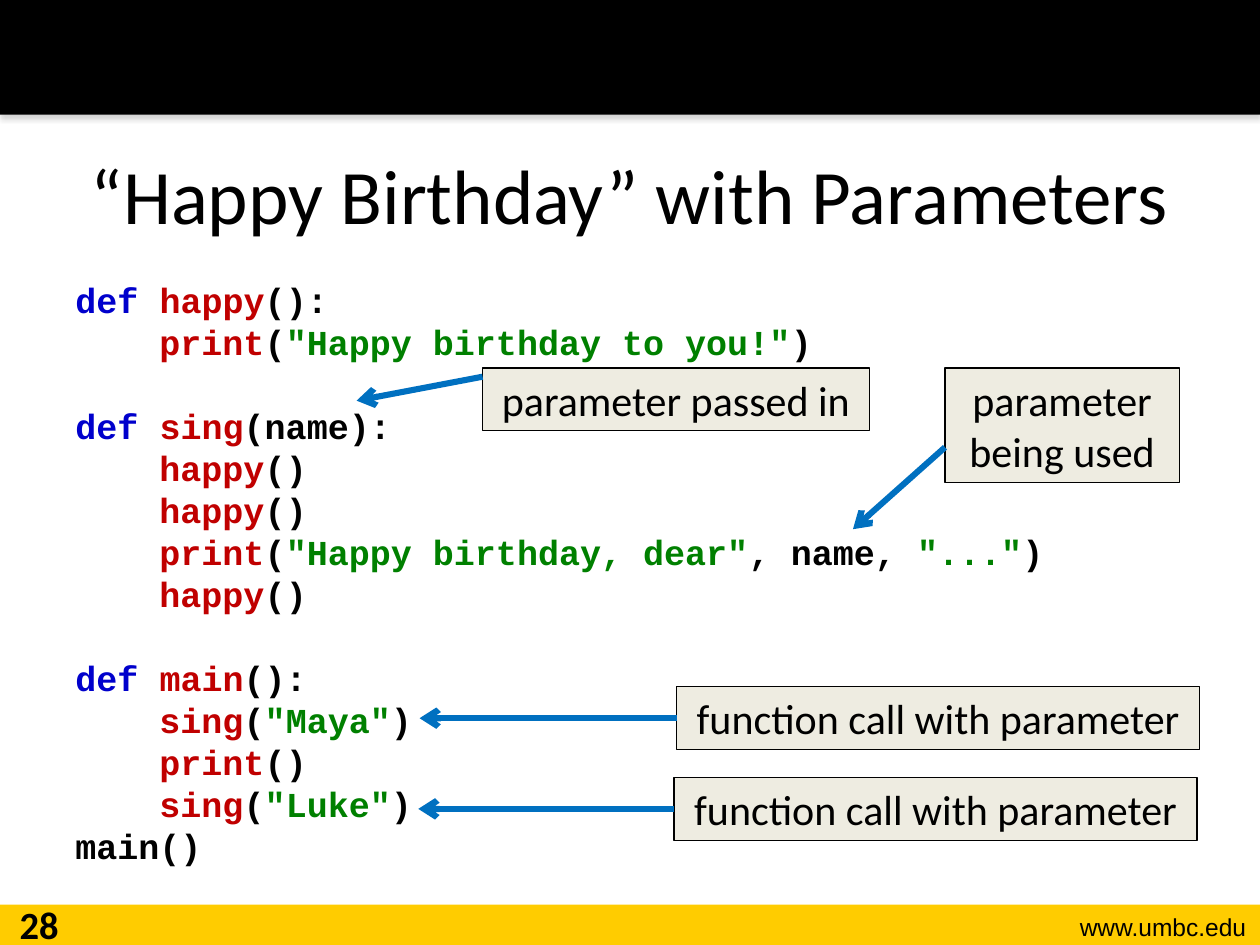
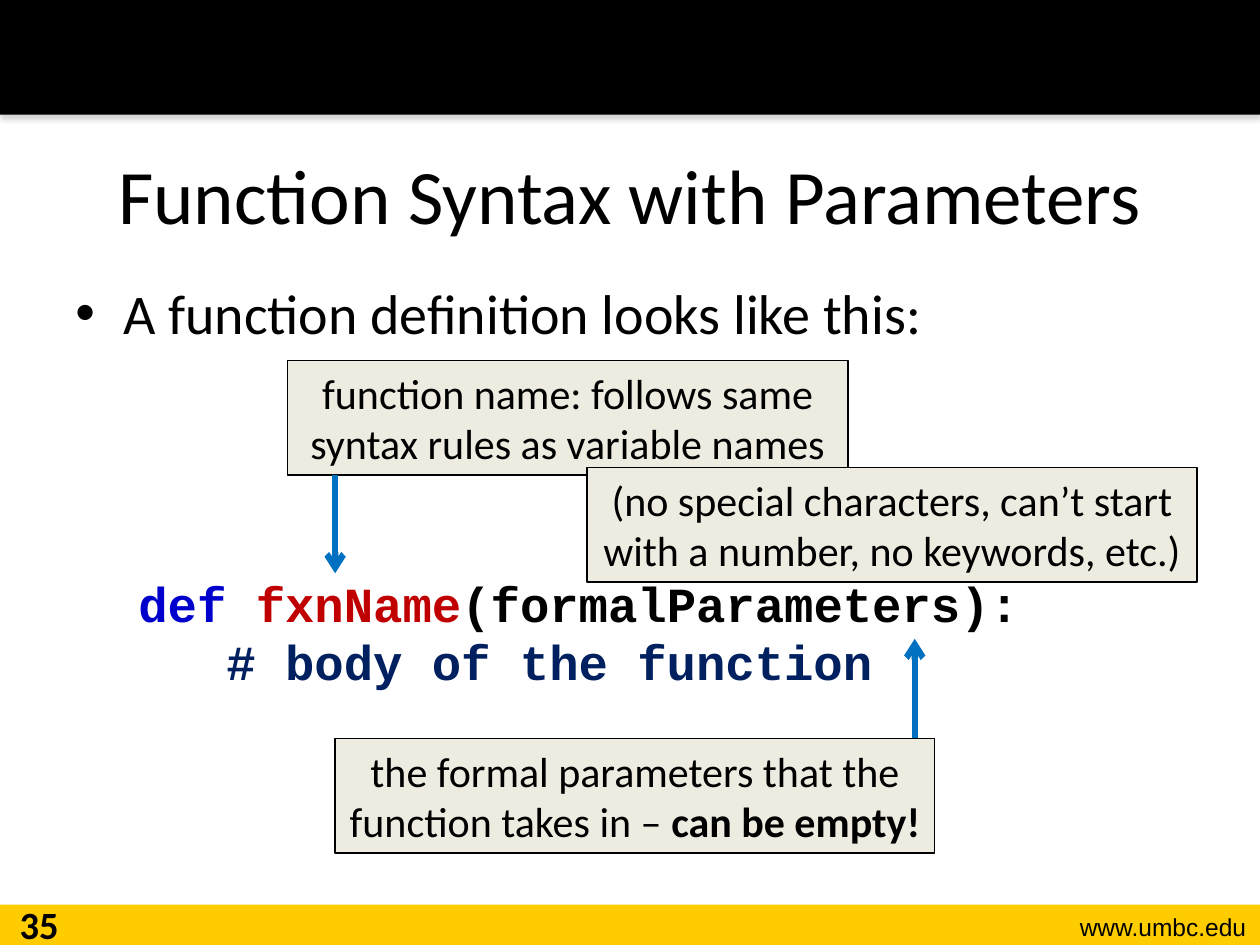
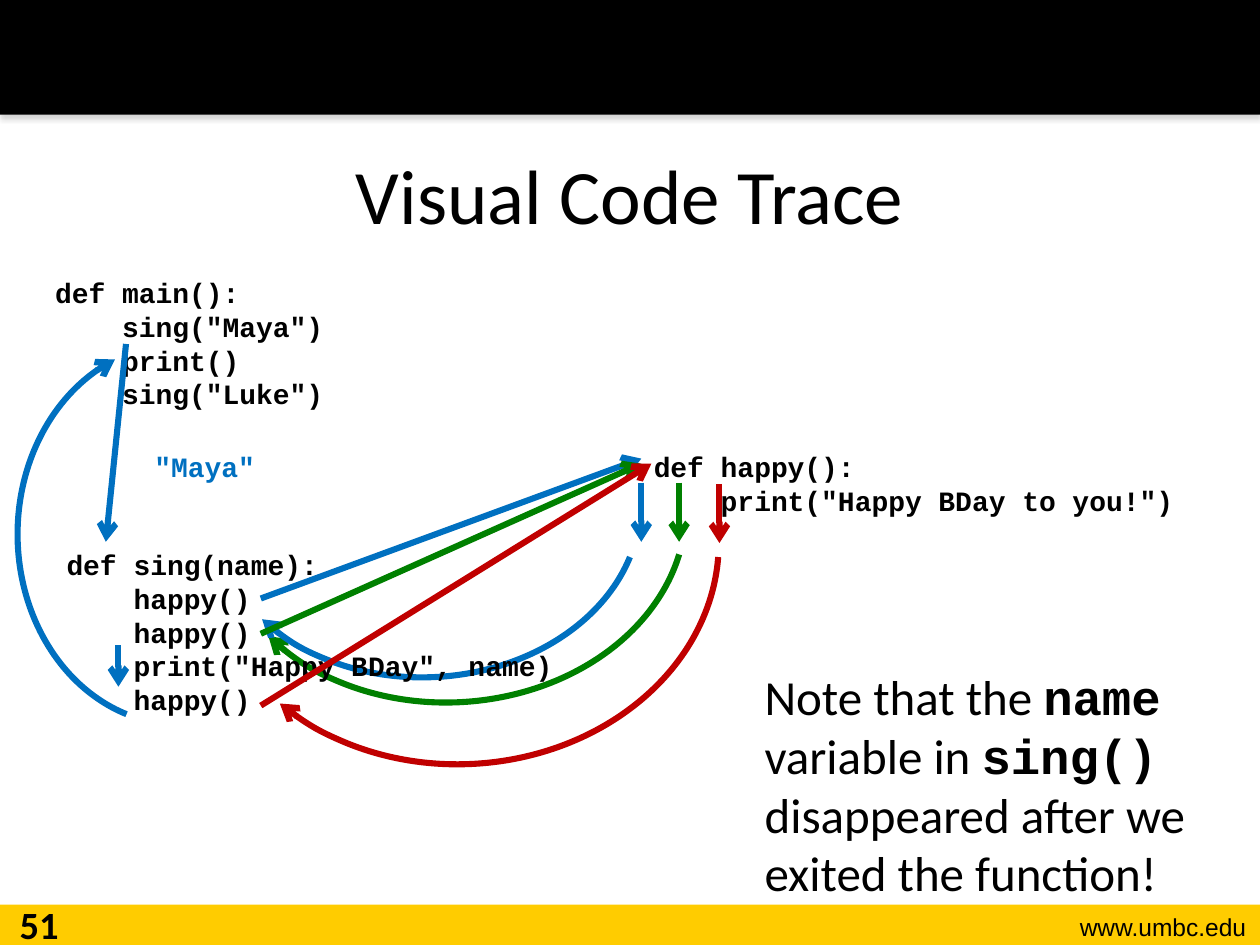
from lxml.etree import SubElement
from pptx import Presentation
from pptx.dml.color import RGBColor
from pptx.enum.shapes import MSO_CONNECTOR as Link, MSO_SHAPE as Form
from pptx.enum.text import MSO_ANCHOR as Anchor, PP_ALIGN as Align
from pptx.oxml.ns import qn
from pptx.util import Pt

SCALE = 9144
BLACK = RGBColor(0, 0, 0)
GOLD = RGBColor(0xFF, 0xCC, 0x00)
CREAM = RGBColor(0xEE, 0xEC, 0xE1)
BLUE = RGBColor(0x00, 0x70, 0xC0)
GREEN = RGBColor(0x00, 0x80, 0x00)
RED = RGBColor(0xC0, 0x00, 0x00)
INDIGO = RGBColor(0x00, 0x00, 0xCC)
NAVY = RGBColor(0x00, 0x20, 0x60)

SANS = "Calibri"
MONO = "Courier New"
BODY = (50, 216, 900, 494)
CODE = dict(face=MONO, bold=True)
DEF = ("def ", dict(tint=INDIGO))


def px(n):
    return int(n * SCALE)


def dress(font, face=None, size=None, bold=None, tint=None):
    if face:
        font.name = face
    if size:
        font.size = Pt(size)
    if bold is not None:
        font.bold = bold
    if tint is not None:
        font.color.rgb = tint


def name(text):
    return text, dict(tint=RED)


def quote(text):
    return text, dict(tint=GREEN)


def call(func, *args):
    return [name("    " + func), "(", *args, ")"]


class Deck:
    def __init__(self):
        self.file = Presentation()
        self.file.slide_width, self.file.slide_height = px(1000), px(750)

    def page(self, num, title):
        self.slide = self.file.slides.add_slide(self.file.slide_layouts[6])
        self.band((0, 718, 1000, 32), GOLD)
        self.shade(self.band((0, 0, 1000, 91), BLACK))
        self.text((800, 719, 199, 34), ["www.umbc.edu"], Align.RIGHT,
                  face="Arial", size=14)
        head = self.text((50, 91, 900, 125), [title], Align.CENTER, size=44)
        head.vertical_anchor = Anchor.MIDDLE
        self.text((0, 710, 62, 40), [str(num)], Align.CENTER,
                  size=22, bold=True)

    def shape(self, form, box):
        shape = self.slide.shapes.add_shape(form, *map(px, box))
        shape.shadow.inherit = False
        return shape

    def band(self, box, fill):
        band = self.shape(Form.RECTANGLE, box)
        band.fill.solid()
        band.fill.fore_color.rgb = fill
        band.line.fill.background()
        return band

    def shade(self, shape):
        glow = shape.element.spPr.find(qn("a:effectLst"))
        drop = SubElement(glow, qn("a:outerShdw"), blurRad=str(Pt(3.1)),
                          dist=str(Pt(1.8)), dir="5400000", rotWithShape="0")
        tint = SubElement(drop, qn("a:srgbClr"), val="808080")
        SubElement(tint, qn("a:alpha"), val="35000")

    def text(self, box, lines, align=Align.LEFT, **look):
        frame = self.slide.shapes.add_textbox(*map(px, box)).text_frame
        frame.word_wrap = True
        for line in lines:
            self.para(frame, line, align, **look)
        return frame

    def para(self, frame, line, align=Align.LEFT, gap=0, **look):
        para = frame.add_paragraph() if frame.text else frame.paragraphs[0]
        para.alignment = align
        if gap:
            para.space_before = Pt(gap)
        for part in [line] if isinstance(line, str) else line:
            if part == "\n":
                para.add_line_break()
                continue
            words, style = (part, {}) if isinstance(part, str) else part
            run = para.add_run()
            run.text = words
            dress(run.font, **style)
        dress(para.font, **{"face": SANS, "tint": BLACK, **look})
        return para

    def indent(self, para, left, first=0, mark=None):
        props = para._p.get_or_add_pPr()
        props.set("marL", str(px(left)))
        props.set("indent", str(px(first)))
        if mark:
            bullet = props.makeelement(qn("a:buChar"), char=mark)
            font = props.makeelement(qn("a:buFont"), typeface="Arial")
            props.insert(0, bullet)
            props.insert(0, font)

    def label(self, box, line):
        label = self.band(box, CREAM)
        label.line.color.rgb = BLACK
        label.line.width = Pt(0.75)
        label.text_frame.word_wrap = True
        self.para(label.text_frame, line, Align.CENTER, size=24)
        return label

    def ink(self, shape, tint):
        shape.line.color.rgb = tint
        shape.line.width = Pt(3.5)
        SubElement(shape.element.spPr.find(qn("a:ln")), qn("a:tailEnd"),
                   type="arrow")

    def arrow(self, start, end, tint=BLUE, source=None):
        arrow = self.slide.shapes.add_connector(
            Link.STRAIGHT, *map(px, start + end))
        self.ink(arrow, tint)
        SubElement(arrow.element.spPr, qn("a:effectLst"))
        if source:
            arrow.begin_connect(source, 1)

    def arc(self, box, sweep, tint, turn=267.4):
        arc = self.shape(Form.ARC, box)
        arc.fill.background()
        arc.adjustments[0], arc.adjustments[1] = sweep
        arc.rotation = turn
        self.ink(arc, tint)


def song(deck):
    deck.page(28, "“Happy Birthday” with Parameters")
    blocks = [
        [[DEF, name("happy"), "():"],
         call("print", quote('"Happy birthday to you!"'))],
        [[DEF, name("sing"), "(name):"],
         call("happy"),
         call("happy"),
         call("print", quote('"Happy birthday, dear"'), ", name, ",
              quote('"..."')),
         call("happy")],
        [[DEF, name("main"), "():"],
         call("sing", quote('"Maya"')),
         call("print"),
         call("sing", quote('"Luke"')),
         "main()"],
    ]
    frame = deck.text(BODY, [])
    for i, block in enumerate(blocks):
        for j, line in enumerate(block):
            deck.para(frame, line, gap=24 if i and not j else 0,
                      size=20, **CODE)
    deck.label((383, 292, 307, 50), "parameter passed in")
    deck.arrow((383, 299), (283, 318))
    deck.label((750, 292, 186, 91), "parameter being used")
    deck.arrow((750, 355), (677, 420))
    for left, top, tip in (537, 545, 333), (535, 617, 332):
        label = deck.label((left, top, 415, 50), "function call with parameter")
        deck.arrow((left, top + 25), (tip, top + 25), source=label)


def syntax(deck):
    deck.page(35, "Function Syntax with Parameters")
    frame = deck.text(BODY, [])
    point = deck.para(frame, "A function definition looks like this:", size=32)
    deck.indent(point, 38, -38, "•")
    code = deck.para(frame, [DEF, name("fxnName"), "(formalParameters):", "\n",
                             ("   # body of the function", dict(tint=NAVY))],
                     gap=130, size=28, **CODE)
    deck.indent(code, 50)
    deck.label((228, 286, 445, 91),
               "function name: follows same syntax rules as variable names")
    deck.arrow((266, 377), (266, 455))
    deck.label((466, 371, 484, 91), "(no special characters, can’t start "
               "with a number, no keywords, etc.)")
    deck.label((266, 586, 476, 91),
               ["the formal parameters that the function takes in – ",
                ("can be empty!", dict(bold=True))])
    deck.arrow((726, 586), (726, 507))


def trace(deck):
    deck.page(51, "Visual Code Trace")
    deck.arc((207, 220, 301, 374), (61.74, 143.08), GREEN)
    deck.arc((204, 233, 269, 340), (63.72, 143.08), BLUE)
    small = dict(size=16, **CODE)
    deck.text((34, 214, 280, 118),
              ["def main():", '    sing("Maya")', "    print()",
               '    sing("Luke")'], **small)
    deck.text((43, 430, 444, 145),
              ["def sing(name):", "    happy()", "    happy()",
               '    print("Happy BDay", name)', "    happy()"], **small)
    deck.text((89, 352, 147, 37), ['"Maya"'], Align.CENTER, tint=BLUE, **small)
    deck.text((509, 352, 441, 64),
              ["def happy():", '    print("Happy BDay to you!")'], **small)
    deck.arrow((100, 273), (84, 430))
    for tint, start, end, left, top in (
            (BLUE, 475, (509, 364), 509, 383),
            (GREEN, 503, (509, 368), 539, 383),
            (RED, 560, (517, 368), 571, 384)):
        deck.arrow((207, start), end, tint)
        deck.arrow((left, top), (left, top + 47), tint)
    deck.arc((14, 273, 256, 302), (63.72, 149.96), BLUE, 0)
    deck.text((597, 524, 388, 196),
              [["Note that the ", ("name", CODE), " variable in ",
                ("sing()", CODE),
                " disappeared after we exited the function!"]], size=28)
    deck.arrow((94, 512), (94, 545))
    deck.arc((193, 229, 346, 409), (57, 139), RED)


def main():
    deck = Deck()
    for build in song, syntax, trace:
        build(deck)
    deck.file.save("out.pptx")


if __name__ == "__main__":
    main()
